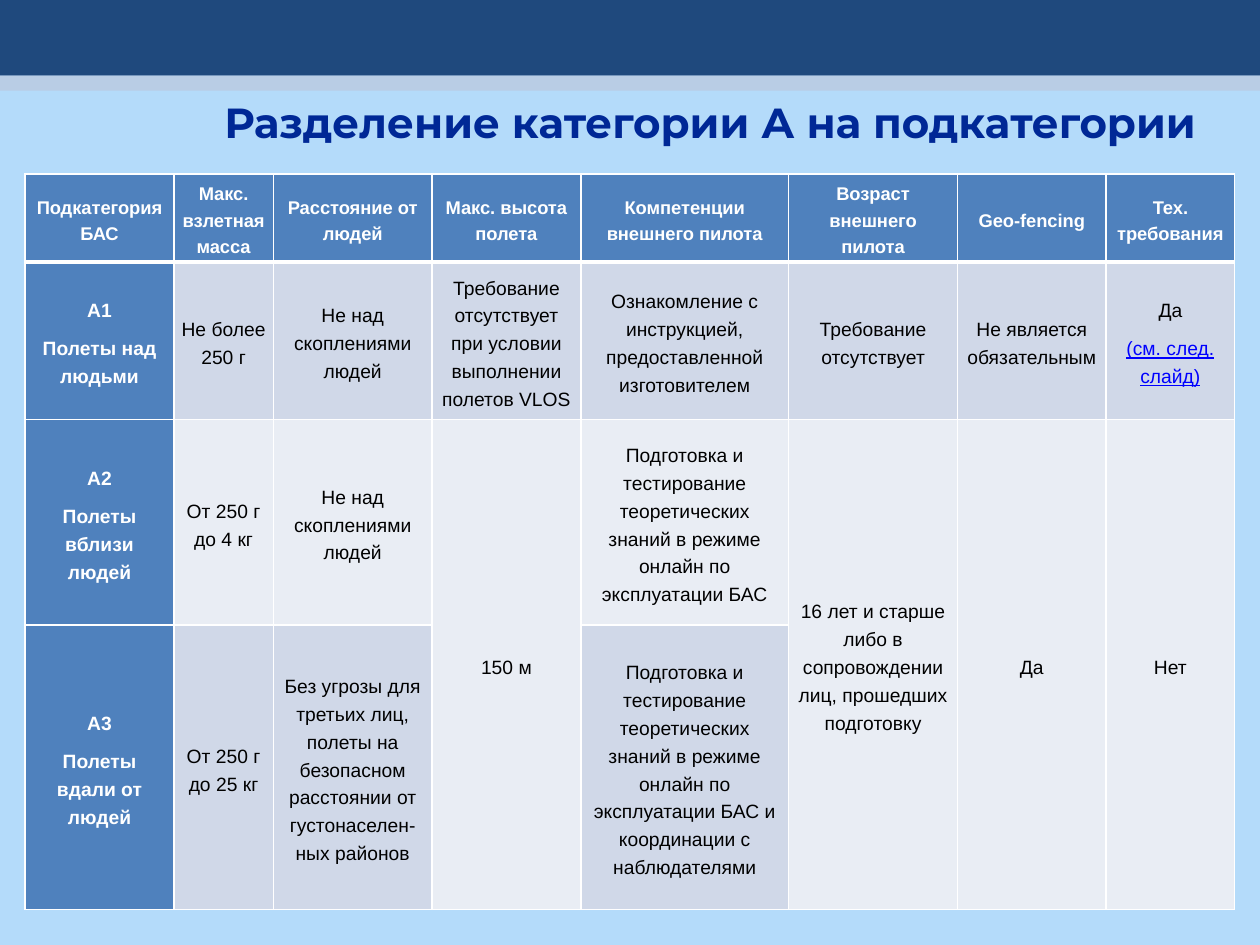
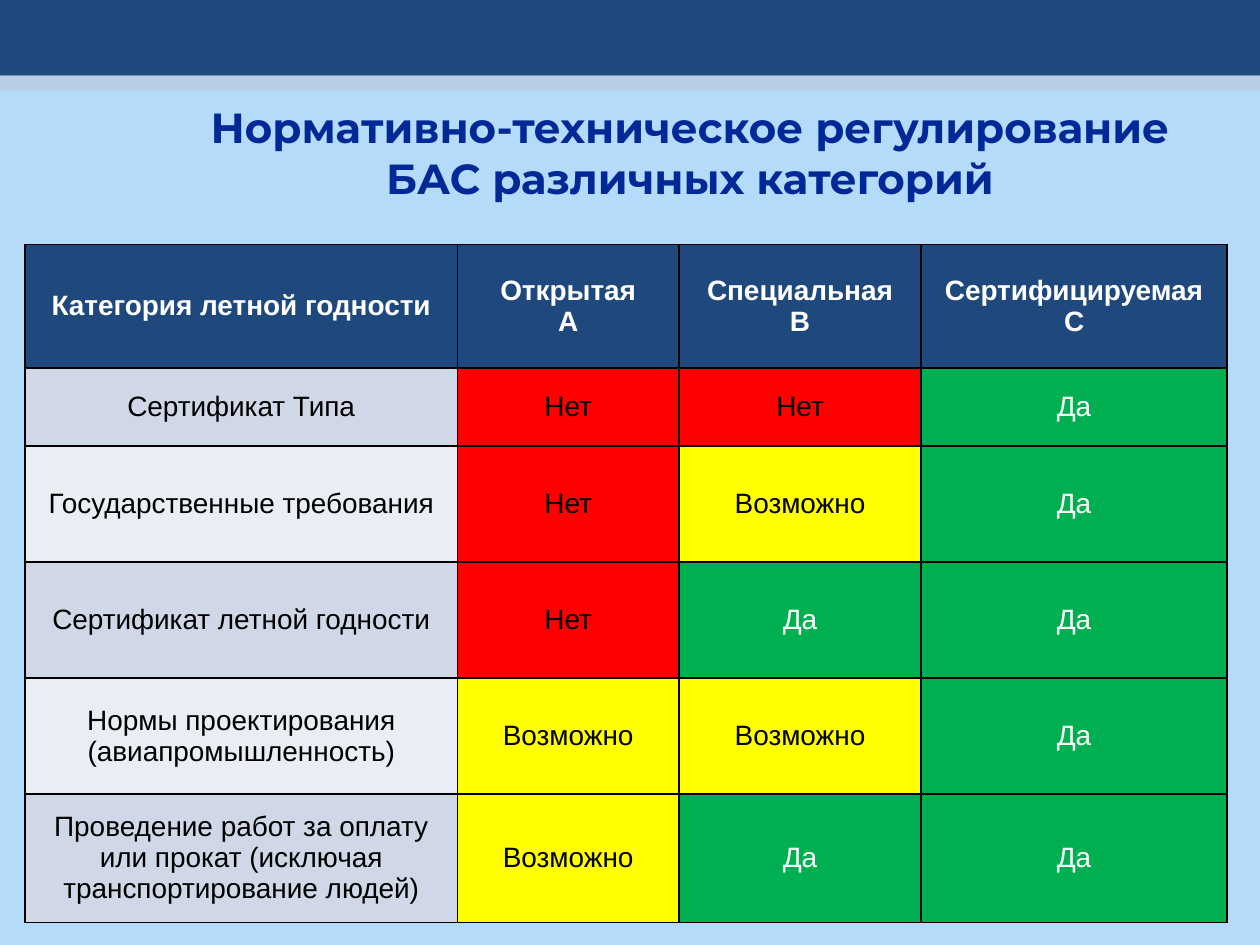
from dataclasses import dataclass

from lxml import etree
from pptx import Presentation
from pptx.dml.color import RGBColor
from pptx.enum.shapes import MSO_SHAPE
from pptx.enum.text import MSO_ANCHOR, MSO_AUTO_SIZE, PP_ALIGN
from pptx.oxml.ns import qn
from pptx.util import Inches, Pt

RECT = MSO_SHAPE.RECTANGLE
MIDDLE = MSO_ANCHOR.MIDDLE
CENTER = PP_ALIGN.CENTER
GROW = MSO_AUTO_SIZE.SHAPE_TO_FIT_TEXT

WIDTH, HEIGHT = Inches(10), Inches(7.5)


@dataclass(frozen=True)
class Theme:
    sky: str = "B4DBFA"
    navy: str = "1F497D"
    mist: str = "B9CDE5"
    title: str = "002896"
    blue: str = "4F81BD"
    dark: str = "D0D8E8"
    light: str = "E9EDF4"
    link: str = "0000FF"
    white: str = "FFFFFF"
    black: str = "000000"
    red: str = "FF0000"
    yellow: str = "FFFF00"
    green: str = "00B050"
    head_font: str = "Montserrat"
    font: str = "Arial"
    title_size: float = 24
    top_size: float = 10.5
    small_size: float = 11
    large_size: float = 16


T = Theme()

# Answer -> fill and text colour
ANSWERS = {
    "Нет": (T.red, T.black),
    "Возможно": (T.yellow, T.black),
    "Да": (T.green, T.white),
}

# Column widths and row heights are percent of the slide; None joins the cell above
CLASS_COLS = [11.8, 7.9, 12.6, 11.8, 16.5, 13.4, 11.8, 10.2]
CLASS_ROWS = [9.33, 16.67, 21.73, 30.13]
CLASS_TEXT = [
    ["Подкатегория БАС", "Макс. взлетная масса", "Расстояние от людей",
     "Макс. высота полета", "Компетенции внешнего пилота",
     "Возраст внешнего пилота", "Geo-fencing", "Тех. требования"],
    ["А1\nПолеты над людьми", "Не более 250 г", "Не над скоплениями людей",
     "Требование отсутствует при условии выполнении полетов VLOS",
     "Ознакомление с инструкцией, предоставленной изготовителем",
     "Требование отсутствует", "Не является обязательным",
     "Да\n(см. след. слайд)"],
    ["А2\nПолеты вблизи людей", "От 250 г до 4 кг", "Не над скоплениями людей",
     "150 м",
     "Подготовка и тестирование теоретических знаний в режиме онлайн "
     "по эксплуатации БАС",
     "16 лет и старше либо в сопровождении лиц, прошедших подготовку",
     "Да", "Нет"],
    ["А3\nПолеты вдали от людей", "От 250 г до 25 кг",
     "Без угрозы для третьих лиц, полеты на безопасном расстоянии "
     "от густонаселен-ных районов",
     None,
     "Подготовка и тестирование теоретических знаний в режиме онлайн "
     "по эксплуатации БАС и координации с наблюдателями",
     None, None, None],
]

RULE_COLS = [34.3, 17.6, 19.2, 24.3]
RULE_ROWS = [13.07, 8.27, 12.27, 12.27, 12.27, 13.6]
RULE_TEXT = [
    ["Категория летной годности", "Открытая\nA", "Специальная\nB",
     "Сертифицируемая\nC"],
    ["Сертификат Типа", "Нет", "Нет", "Да"],
    ["Государственные требования", "Нет", "Возможно", "Да"],
    ["Сертификат летной годности", "Нет", "Да", "Да"],
    ["Нормы проектирования (авиапромышленность)", "Возможно", "Возможно", "Да"],
    ["Проведение работ за оплату или прокат (исключая "
     "транспортирование людей)", "Возможно", "Да", "Да"],
]


def across(share):
    return round(WIDTH * share / 100)


def down(share):
    return round(HEIGHT * share / 100)


def paint(fill, color):
    fill.solid()
    fill.fore_color.rgb = RGBColor.from_string(color)


def assign(target, values):
    for name, value in values.items():
        setattr(target, name, value)


def style(part, color, **values):
    """Format the font of a paragraph."""
    assign(part.font, values)
    part.font.color.rgb = RGBColor.from_string(color)


def add_band(slide, top, height, color):
    band = slide.shapes.add_shape(RECT, 0, down(top), WIDTH, down(height))
    band.shadow.inherit = False
    paint(band.fill, color)
    band.line.fill.background()


def add_title(slide, text, left, top, width, height):
    box = slide.shapes.add_textbox(
        across(left), down(top), across(width), down(height))
    frame = box.text_frame
    assign(frame, {"word_wrap": True, "auto_size": GROW, "text": text})
    part = frame.paragraphs[0]
    part.alignment = CENTER
    style(part, T.title, name=T.head_font, size=Pt(T.title_size), bold=True)


def add_page(deck):
    """Blank slide with the shared background and top bands."""
    slide = deck.slides.add_slide(deck.slide_layouts[6])
    paint(slide.background.fill, T.sky)
    add_band(slide, 0, 8, T.navy)
    add_band(slide, 8, 1.6, T.mist)
    return slide


def add_edge(cell, side, color, points):
    line = etree.SubElement(
        cell._tc.get_or_add_tcPr(), qn(f"a:ln{side}"), w=str(Pt(points)))
    fill = etree.SubElement(line, qn("a:solidFill"))
    etree.SubElement(fill, qn("a:srgbClr"), val=color)


def fill_cell(cell, text, look, inset, spacing):
    """Write one cell; look is fill, text colour, bold and size."""
    back, color, bold, size = look
    paint(cell.fill, back)
    side, edge = map(Inches, inset)
    assign(cell, {"margin_left": side, "margin_right": side,
                  "margin_top": edge, "margin_bottom": edge,
                  "vertical_anchor": MIDDLE})
    if text is None:
        return
    cell.text_frame.text = text
    for part in cell.text_frame.paragraphs:
        assign(part, {"alignment": CENTER, **spacing})
        style(part, color, name=T.font, size=Pt(size), bold=bold)


def add_grid(slide, top, cols, rows, texts, look, edge, inset,
             spacing, rule=1):
    """Table whose look(row, col, text) styles cells; rule is the header line."""
    table = slide.shapes.add_table(
        len(rows), len(cols), across(2), down(top),
        across(sum(cols)), down(sum(rows))).table
    assign(table, {"first_row": False, "horz_banding": False})
    for col, share in zip(table.columns, cols):
        col.width = across(share)
    for row, share in zip(table.rows, rows):
        row.height = down(share)
    for r, line in enumerate(texts):
        for c, text in enumerate(line):
            cell = table.cell(r, c)
            sides = {"L": 1, "R": 1, "T": rule if r == 1 else 1,
                     "B": rule if r == 0 else 1}
            for side, points in sides.items():
                add_edge(cell, side, edge, points)
            base = r - 1 if text is None else r
            fill_cell(cell, text, look(base, c, text), inset, spacing)
            if text is None:
                table.cell(base, c).merge(cell)
    return table


def stripe(row):
    return T.dark if row % 2 else T.light


def class_look(row, col, text):
    size = T.small_size if row else T.top_size
    if row == 0 or col == 0:
        return T.blue, T.white, True, size
    return stripe(row), T.black, False, size


def rule_look(row, col, text):
    if row == 0:
        return T.navy, T.white, True, T.large_size
    back, color = ANSWERS[text] if col else (stripe(row), T.black)
    return back, color, False, T.large_size


def main():
    deck = Presentation()
    assign(deck, {"slide_width": WIDTH, "slide_height": HEIGHT})

    # Subcategories
    slide = add_page(deck)
    add_title(slide, "Разделение категории А на подкатегории",
              15.4, 9.6, 81.9, 6.67)
    table = add_grid(slide, 18.4, CLASS_COLS, CLASS_ROWS, CLASS_TEXT,
                     class_look, T.white, (0.06, 0),
                     {"line_spacing": 1.3, "space_after": Pt(6)}, rule=3)
    style(table.cell(1, 7).text_frame.paragraphs[1], T.link, underline=True)

    # Regulation by category
    slide = add_page(deck)
    add_grid(slide, 25.87, RULE_COLS, RULE_ROWS, RULE_TEXT,
             rule_look, T.black, (0.1, 0.05), {})
    add_title(slide, "Нормативно-техническое регулирование БАС "
              "различных категорий", 13, 10.13, 83.5, 12.13)

    deck.save("out.pptx")


if __name__ == "__main__":
    main()
